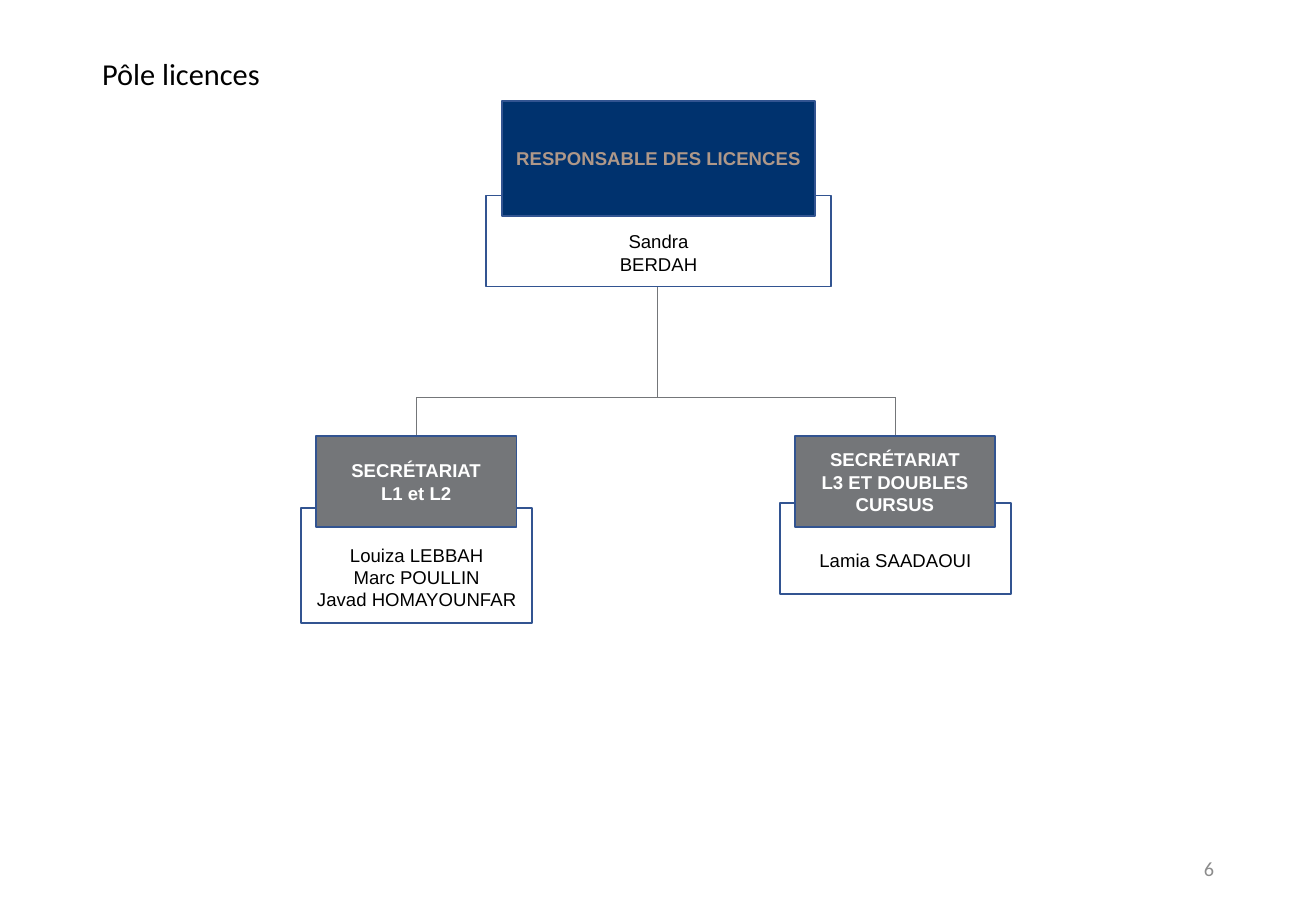
from lxml import etree
from pptx import Presentation
from pptx.dml.color import RGBColor
from pptx.enum.shapes import MSO_CONNECTOR, MSO_SHAPE
from pptx.enum.text import MSO_ANCHOR, PP_ALIGN
from pptx.oxml.ns import qn
from pptx.util import Inches, Pt

WHITE = RGBColor(0xFF, 0xFF, 0xFF)
BLACK = RGBColor(0x00, 0x00, 0x00)
NAVY = RGBColor(0x00, 0x32, 0x6E)
GREY = RGBColor(0x74, 0x76, 0x79)
SAND = RGBColor(0xAF, 0x98, 0x89)
BORDER = RGBColor(0x32, 0x54, 0x91)
PAGE_GREY = RGBColor(0x8C, 0x8C, 0x8C)


class OrganisationChart:
    """Holds the style and the current slide."""

    body_font = "Arial"
    page_font = "Calibri"

    def __init__(self, presentation):
        self.slide = presentation.slides.add_slide(presentation.slide_layouts[5])

    def set_text(self, shape, lines, font, size, color, align, bold=False):
        frame = shape.text_frame
        frame.word_wrap = True
        frame.vertical_anchor = MSO_ANCHOR.MIDDLE
        frame.text = "\n".join(lines)
        for paragraph in frame.paragraphs:
            paragraph.alignment = align
            paragraph.font.name = font
            paragraph.font.size = Pt(size)
            paragraph.font.color.rgb = color
            paragraph.font.bold = bold
        return frame

    def title(self, text, left, top, width, height):
        shape = self.slide.shapes.title
        shape.left, shape.top = Inches(left), Inches(top)
        shape.width, shape.height = Inches(width), Inches(height)
        frame = self.set_text(shape, [text], self.page_font, 18, BLACK, PP_ALIGN.LEFT)
        frame.paragraphs[0].line_spacing = 0.9

    def page_number(self, text, left, top, width, height):
        shape = self.slide.shapes.add_textbox(
            Inches(left), Inches(top), Inches(width), Inches(height))
        self.set_text(shape, [text], self.page_font, 12, PAGE_GREY, PP_ALIGN.RIGHT)

    def box(self, lines, left, top, width, height, fill=None, color=BLACK, bold=False):
        shape = self.slide.shapes.add_shape(
            MSO_SHAPE.RECTANGLE, Inches(left), Inches(top), Inches(width), Inches(height))
        shape.shadow.inherit = False
        if fill is None:
            shape.fill.background()
        else:
            shape.fill.solid()
            shape.fill.fore_color.rgb = fill
        shape.line.color.rgb = BORDER
        shape.line.width = Pt(1)
        return self.set_text(shape, lines, self.body_font, 11, color, PP_ALIGN.CENTER, bold)

    def people(self, names, left, top, width, height, fill=None):
        # The names sit below the heading that overlaps the box
        self.box(names, left, top, width, height, fill).margin_top = Inches(0.24)

    def heading(self, lines, left, top, width, height, fill, color):
        self.box(lines, left, top, width, height, fill, color, bold=True)

    def line(self, start_x, start_y, end_x, end_y):
        connector = self.slide.shapes.add_connector(
            MSO_CONNECTOR.STRAIGHT,
            Inches(start_x), Inches(start_y), Inches(end_x), Inches(end_y))
        connector.line.color.rgb = GREY
        connector.line.width = Pt(0.5)
        etree.SubElement(connector._element.spPr, qn("a:effectLst"))


def main():
    presentation = Presentation()
    presentation.slide_width = Inches(10.83)
    presentation.slide_height = Inches(7.5)
    chart = OrganisationChart(presentation)

    # Title and page number
    chart.title("Pôle licences", 0.74, 0.42, 9.34, 0.4)
    chart.page_number("6", 7.65, 6.95, 2.44, 0.4)

    # Trunk and crossbar
    manager_center, branch_top, office_top = 5.41, 3.27, 3.59
    offices = [
        (3.43, ["SECRÉTARIAT", "L1 et L2"],
         ["Louiza LEBBAH", "Marc POULLIN", "Javad HOMAYOUNFAR"], 4.18, 0.95),
        (7.37, ["SECRÉTARIAT", "L3 ET DOUBLES CURSUS"], ["Lamia SAADAOUI"], 4.14, 0.75),
    ]
    chart.line(manager_center, 1.78, manager_center, branch_top)
    chart.line(offices[0][0], branch_top, offices[-1][0], branch_top)

    # Offices below the crossbar
    for center, heading, names, names_top, names_height in offices:
        chart.line(center, branch_top, center, office_top)
        chart.people(names, center - 0.95, names_top, 1.9, names_height)
        chart.heading(heading, center - 0.83, office_top, 1.65, 0.75, GREY, WHITE)

    # Manager
    chart.people(["Sandra", "BERDAH"], 4, 1.61, 2.84, 0.75, WHITE)
    chart.heading(["RESPONSABLE DES LICENCES"], 4.13, 0.83, 2.58, 0.95, NAVY, SAND)

    presentation.save("out.pptx")


if __name__ == "__main__":
    main()
